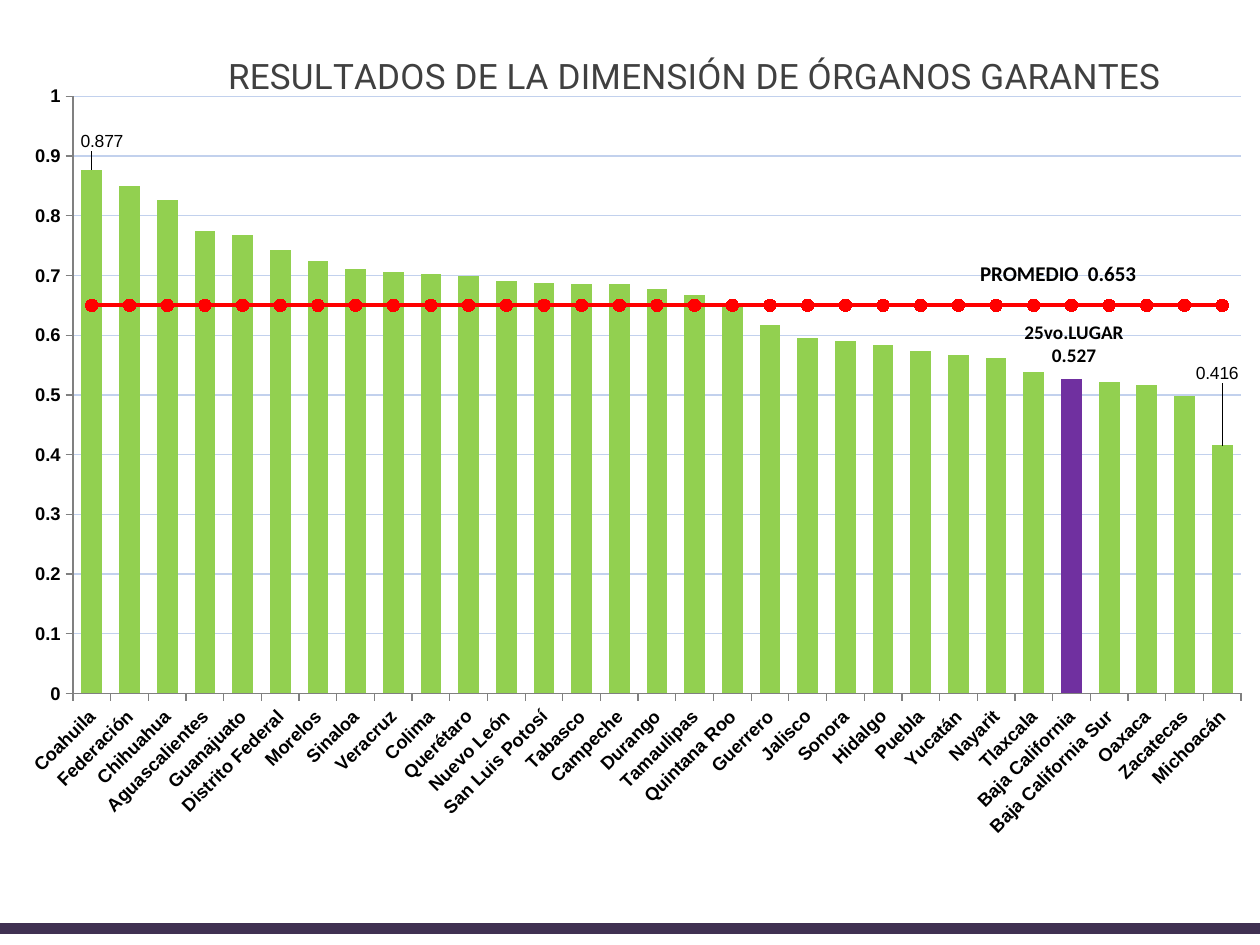
import pptx
import pptx.chart.data
import pptx.dml.color
import pptx.enum.chart
import pptx.enum.shapes
import pptx.enum.text
import pptx.oxml
import pptx.oxml.ns
import pptx.util

Inches = pptx.util.Inches
Pt = pptx.util.Pt
RGB = pptx.dml.color.RGBColor
qn = pptx.oxml.ns.qn
enum = pptx.enum.chart
ALIGN = pptx.enum.text.PP_ALIGN

BLACK = RGB(0, 0, 0)
GRAY = RGB(0x40, 0x40, 0x40)
AXIS = RGB(0x80, 0x80, 0x80)
GRID = RGB(0xC2, 0xD1, 0xED)
GREEN = RGB(0x92, 0xD0, 0x50)
PURPLE = RGB(0x70, 0x30, 0xA0)
RED = RGB(0xFF, 0, 0)
PLUM = RGB(0x40, 0x31, 0x52)

MEAN = 0.65
HOME = "Baja California"
SCORES = {
    "Coahuila": 0.877, "Federación": 0.85, "Chihuahua": 0.826,
    "Aguascalientes": 0.774, "Guanajuato": 0.767, "Distrito Federal": 0.743,
    "Morelos": 0.725, "Sinaloa": 0.711, "Veracruz": 0.705, "Colima": 0.702,
    "Querétaro": 0.699, "Nuevo León": 0.69, "San Luis Potosí": 0.688,
    "Tabasco": 0.686, "Campeche": 0.685, "Durango": 0.677,
    "Tamaulipas": 0.667, "Quintana Roo": 0.653, "Guerrero": 0.617,
    "Jalisco": 0.595, "Sonora": 0.591, "Hidalgo": 0.583, "Puebla": 0.573,
    "Yucatán": 0.566, "Nayarit": 0.562, "Tlaxcala": 0.539, HOME: 0.527,
    "Baja California Sur": 0.522, "Oaxaca": 0.517, "Zacatecas": 0.499,
    "Michoacán": 0.416,
}


def style(font, name, size, color=BLACK, bold=False):
    font.name = name
    font.size = Pt(size)
    font.bold = bold
    font.color.rgb = color


def text(frame, lines, align=ALIGN.LEFT, **form):
    for i, line in enumerate(lines):
        para = frame.paragraphs[0] if i == 0 else frame.add_paragraph()
        para.alignment = align
        run = para.add_run()
        run.text = line
        style(run.font, **form)


def paint(fill, color):
    fill.solid()
    fill.fore_color.rgb = color


def chart_xml(body):
    return pptx.oxml.parse_xml(body.replace(
        ">", ' xmlns:c="http://schemas.openxmlformats.org/drawingml/2006/chart">', 1))


def layout(parent, index, modes, **spots):
    for old in parent.findall(qn("c:layout")):
        parent.remove(old)
    parts = "".join(f'<c:{tag} val="{val}"/>' for tag, val in {**modes, **spots}.items())
    parent.insert(index, chart_xml(
        f"<c:layout><c:manualLayout>{parts}</c:manualLayout></c:layout>"))


def add_mean(chart):
    bars = chart.plots[0]._element
    row = bars.findall(qn("c:ser"))[1]
    for flag in row.findall(qn("c:invertIfNegative")):
        row.remove(flag)
    axes = "".join(f'<c:axId val="{ax.get("val")}"/>' for ax in bars.findall(qn("c:axId")))
    group = chart_xml('<c:lineChart><c:grouping val="standard"/><c:varyColors val="0"/>'
                      f'<c:marker val="1"/>{axes}</c:lineChart>')
    group.insert(2, row)
    bars.addnext(group)
    line = chart.plots[1].series[0]
    line.smooth = False
    line.format.line.color.rgb = RED
    line.format.line.width = Pt(2.25)
    line.marker.style = enum.XL_MARKER_STYLE.CIRCLE
    line.marker.size = 7
    paint(line.marker.format.fill, RED)
    line.marker.format.line.color.rgb = RED


def set_axes(chart):
    for axis in (chart.category_axis, chart.value_axis):
        style(axis.tick_labels.font, "Arial", 10.5, bold=True)
        axis.format.line.color.rgb = AXIS
        axis.format.line.width = Pt(0.75)
        axis.major_tick_mark = enum.XL_TICK_MARK.OUTSIDE
    names = chart.category_axis._element.find(qn("c:txPr")).find(qn("a:bodyPr"))
    names.set("rot", "-2700000")
    names.set("vert", "horz")
    value = chart.value_axis
    value.minimum_scale, value.maximum_scale, value.major_unit = 0, 1, 0.1
    value.tick_labels.number_format = "General"
    value.tick_labels.number_format_is_linked = False
    value.has_major_gridlines = True
    value.major_gridlines.format.line.color.rgb = GRID
    value.major_gridlines.format.line.width = Pt(0.75)


def add_labels(bars):
    bars.data_labels.show_value = False
    for index, x, y in ((0, 0.008, -0.045), (len(SCORES) - 1, -0.004, -0.091)):
        label = bars.points[index].data_label
        style(label.font, "Arial", 10)
        label.position = enum.XL_LABEL_POSITION.INSIDE_END
        spot = next(el for el in bars._element.iter(qn("c:dLbl"))
                    if el.find(qn("c:idx")).get("val") == str(index))
        layout(spot, 1, {}, x=x, y=y)
    bars.data_labels._element.append(chart_xml(
        '<c:extLst><c:ext uri="{CE6537A1-D6FC-4f65-9D91-7224C49458BB}" '
        'xmlns:c15="http://schemas.microsoft.com/office/drawing/2012/chart">'
        '<c15:showLeaderLines val="0"/></c:ext></c:extLst>'))


def add_chart(slide, left, top, width, height):
    data = pptx.chart.data.CategoryChartData(number_format="0.000")
    data.categories = list(SCORES)
    data.add_series("Series 1", list(SCORES.values()))
    data.add_series("Series 2", [MEAN] * len(SCORES))
    chart = slide.shapes.add_chart(enum.XL_CHART_TYPE.COLUMN_STACKED,
                                   left, top, width, height, data).chart
    style(chart.font, "Calibri", 10)
    chart.has_legend = False
    chart.has_title = True
    text(chart.chart_title.text_frame, ["RESULTADOS DE LA DIMENSIÓN DE ÓRGANOS GARANTES"],
         align=ALIGN.CENTER, name="Roboto", size=20, color=GRAY)
    edge = {"xMode": "edge", "yMode": "edge"}
    layout(chart.chart_title._element, 1, edge, x=0.176, y=0.049)
    chart.chart_title.include_in_layout = True
    area = chart._chartSpace.chart.plotArea
    layout(area, 0, {"layoutTarget": "inner", **edge}, x=0.058, y=0.102, w=0.927, h=0.632)
    set_axes(chart)

    plot = chart.plots[0]
    plot.gap_width, plot.overlap = 81, 100
    plot.vary_by_categories = False
    bars = plot.series[0]
    paint(bars.format.fill, GREEN)
    paint(bars.points[list(SCORES).index(HOME)].format.fill, PURPLE)
    add_labels(bars)
    add_mean(chart)


def add_note(slide, left, top, width, height, lines, size, align=ALIGN.LEFT):
    frame = slide.shapes.add_textbox(left, top, width, height).text_frame
    frame.word_wrap = True
    text(frame, lines, align=align, name="Calibri", size=size, bold=True)


def add_foot(slide, left, top, width):
    line = slide.shapes.add_connector(pptx.enum.shapes.MSO_CONNECTOR.STRAIGHT,
                                      left, top, left + width, top)
    line.line.color.rgb = PLUM
    line.line.width = Pt(6)
    line._element.spPr.append(pptx.oxml.parse_xml(
        '<a:effectLst xmlns:a="http://schemas.openxmlformats.org/drawingml/2006/main"/>'))


def main():
    deck = pptx.Presentation()
    deck.slide_width, deck.slide_height = Inches(10), Inches(7.5)
    slide = deck.slides.add_slide(deck.slide_layouts[6])
    add_chart(slide, 0, 0, deck.slide_width, deck.slide_height)
    add_note(slide, Inches(7.99), Inches(2.49), Inches(1.07), Inches(0.5),
             ["25vo.LUGAR", "0.527"], 11, ALIGN.CENTER)
    add_note(slide, Inches(7.68), Inches(2.02), Inches(1.47), Inches(0.26),
             ["PROMEDIO  0.653"], 12)
    add_foot(slide, Inches(-0.04), Inches(7.37), Inches(10.04))
    deck.save("out.pptx")


if __name__ == "__main__":
    main()
